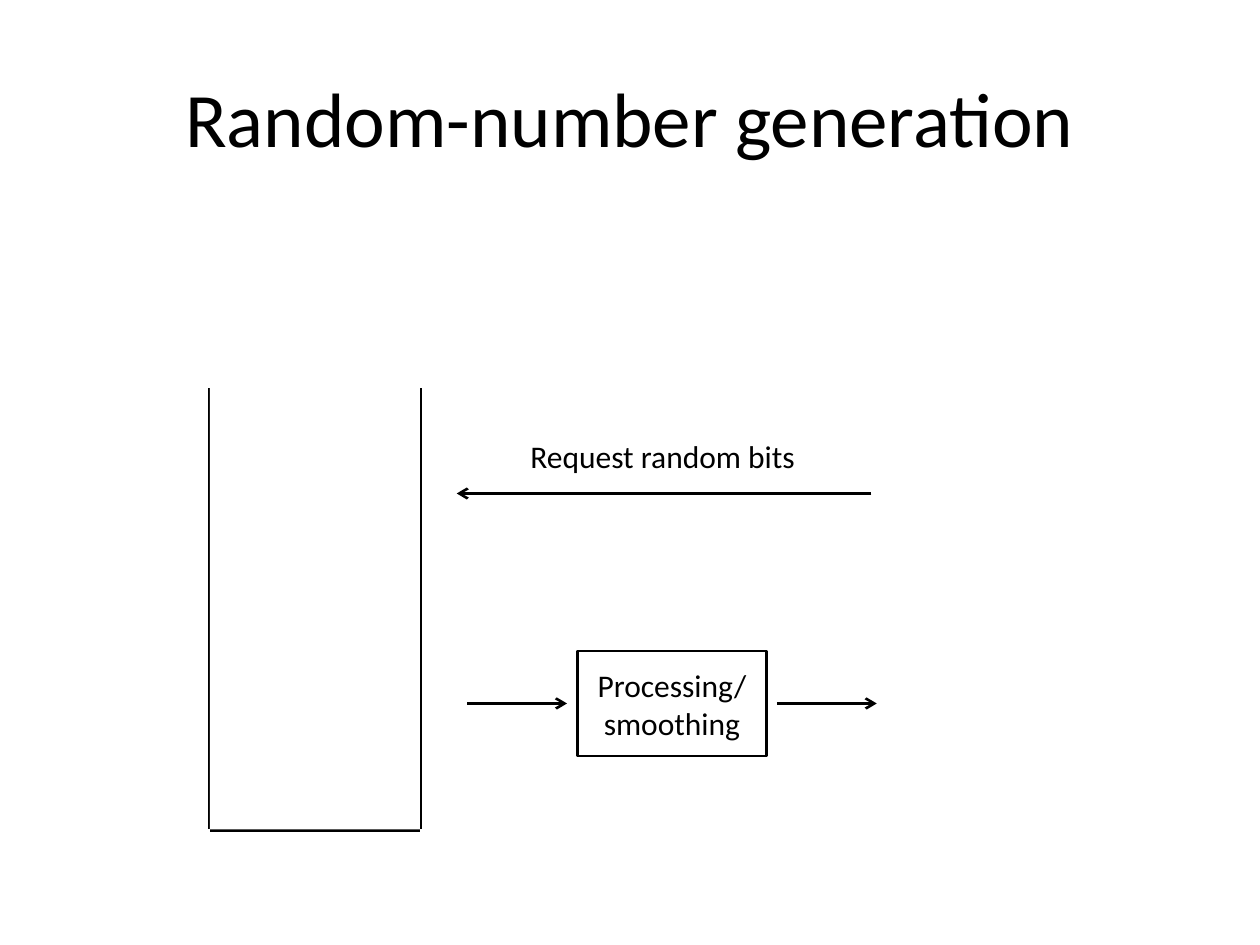
from typing import Any, NamedTuple

from lxml import etree
from pptx import Presentation
from pptx import util as u
from pptx.dml.color import RGBColor
from pptx.enum import shapes, text
from pptx.oxml.ns import qn

BLACK = "000000"
WHITE = "FFFFFF"
POOL_LEFT, POOL_RIGHT, POOL_TOP, POOL_BOTTOM = 120, 240, 222, 474
OUTPUT_Y = 402


class Line(NamedTuple):
    x1: float
    y1: float
    x2: float
    y2: float
    width: float = 1.5
    arrow: bool = True


class Box(NamedTuple):
    left: float
    top: float
    width: float
    height: float


POOL_WALLS = [
    Line(POOL_LEFT, POOL_TOP, POOL_LEFT, POOL_BOTTOM, 2.5, False),
    Line(POOL_RIGHT, POOL_TOP, POOL_RIGHT, POOL_BOTTOM, 2.5, False),
    Line(POOL_RIGHT, POOL_BOTTOM, POOL_LEFT, POOL_BOTTOM, 2.5, False),
]
ARROWS = [
    Line(498, 282, 261, 282),
    Line(267, OUTPUT_Y, 324, OUTPUT_Y),
    Line(444, OUTPUT_Y, 501, OUTPUT_Y),
]
POOL_INSIDE = Box(POOL_LEFT, 216, POOL_RIGHT - POOL_LEFT, POOL_BOTTOM - 216)
PROCESSING = Box(330, OUTPUT_Y - 30, 108, 60)
REQUEST = Box(296, 246, 168, 29)
TITLE = Box(36, 21.6, 648, 90)


def color(value: str) -> RGBColor:
    return RGBColor.from_string(value)


def apply(target: Any, values: dict[str, Any]) -> None:
    for name, value in values.items():
        setattr(target, name, value)


def points(values: tuple) -> list:
    return [u.Pt(value) for value in values]


def draw_line(slide: Any, line: Line) -> None:
    connector = slide.shapes.add_connector(
        shapes.MSO_CONNECTOR.STRAIGHT, *points(line[:4])
    )
    connector.line.width = u.Pt(line.width)
    connector.line.color.rgb = color(BLACK)
    if line.arrow:
        tail = etree.SubElement(connector.line._get_or_add_ln(), qn("a:tailEnd"))
        tail.set("type", "arrow")
    etree.SubElement(connector._element.spPr, qn("a:effectLst"))


def draw_rectangle(slide: Any, box: Box, fill: str = "", line: str = "") -> Any:
    shape = slide.shapes.add_shape(shapes.MSO_SHAPE.RECTANGLE, *points(box))
    shape.shadow.inherit = False
    if fill:
        shape.fill.solid()
        shape.fill.fore_color.rgb = color(fill)
    else:
        shape.fill.background()
    if line:
        shape.line.color.rgb = color(line)
        shape.line.width = u.Pt(1.5)
    else:
        shape.line.fill.background()
    return shape


def write(shape: Any, wording: str, size: float, align: Any, frame: dict[str, Any]) -> None:
    apply(shape.text_frame, frame)
    paragraph = shape.text_frame.paragraphs[0]
    paragraph.text = wording
    paragraph.alignment = align
    apply(paragraph.font, {"name": "Calibri", "size": u.Pt(size)})
    paragraph.font.color.rgb = color(BLACK)


def main() -> None:
    presentation = Presentation()
    apply(presentation, {"slide_width": u.Pt(720), "slide_height": u.Pt(540)})
    slide = presentation.slides.add_slide(presentation.slide_layouts[5])
    middle = {"vertical_anchor": text.MSO_ANCHOR.MIDDLE, "word_wrap": True}

    title = slide.shapes.title
    apply(title, dict(zip(Box._fields, points(TITLE))))
    write(title, "Random-number generation", 44, text.PP_ALIGN.CENTER, middle)

    for wall in POOL_WALLS:
        draw_line(slide, wall)
    draw_rectangle(slide, POOL_INSIDE, fill=WHITE)

    for arrow in ARROWS:
        draw_line(slide, arrow)

    request = slide.shapes.add_textbox(*points(REQUEST))
    grow = {"word_wrap": False, "auto_size": text.MSO_AUTO_SIZE.SHAPE_TO_FIT_TEXT}
    write(request, "Request random bits", 18, text.PP_ALIGN.LEFT, grow)

    processing = draw_rectangle(slide, PROCESSING, line=BLACK)
    write(processing, "Processing/\nsmoothing", 18, text.PP_ALIGN.CENTER, middle)

    presentation.save("out.pptx")


if __name__ == "__main__":
    main()
